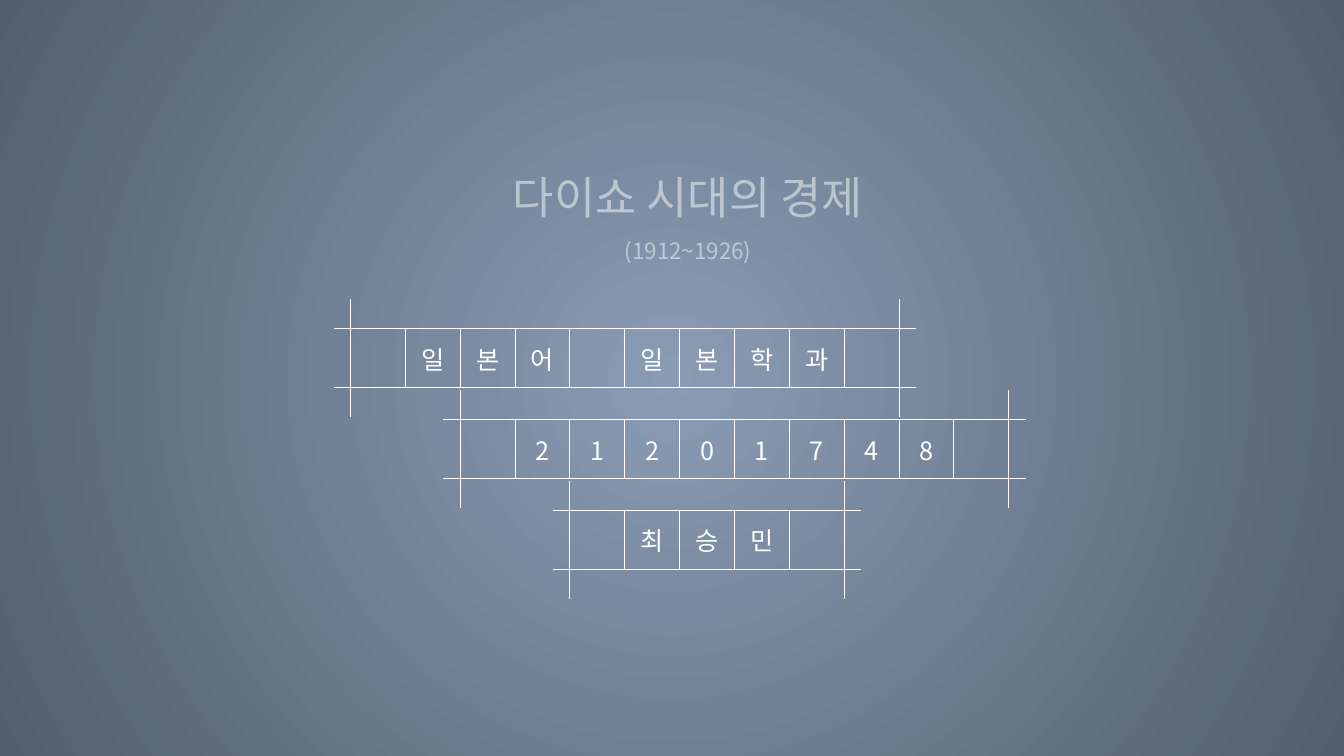
"""Build the title slide: a heading above three staggered manuscript-grid tables."""
from dataclasses import dataclass

from lxml.etree import SubElement
from pptx import Presentation
from pptx.dml.color import RGBColor
from pptx.enum.text import MSO_ANCHOR as Anchor, MSO_AUTO_SIZE as AutoSize, PP_ALIGN as Align
from pptx.oxml.ns import qn
from pptx.util import Inches, Pt

FONT = "Noto Sans CJK KR"
COLOURS = {"centre": "8A9CB4", "edge": "535E6D", "ink": "FFFFFF"}
WIDTH, HEIGHT = Inches(13.333), Inches(7.5)
COLUMN = WIDTH / 24.5
OVERHANG = 0.31
FIRST_LEFT, LEFT_STEP = 6.08, 2
FIRST_TOP, TOP_STEP = 0.396, 0.12
ROW_HEIGHTS = (0.039, 0.078, 0.039)
PLAIN_STYLE = "{2D5ABB26-0587-4C30-8999-92F81FD0307C}"


@dataclass(frozen=True)
class Strip:
    """One row of lettered squares; a space stands for an empty square."""
    letters: str
    order: int


@dataclass(frozen=True)
class Heading:
    """One line of the title block."""
    text: str
    size: int


STRIPS = [Strip(" 일본어 일본학과 ", 0), Strip(" 21201748 ", 1), Strip(" 최승민 ", 2)]
HEADINGS = [Heading("다이쇼 시대의 경제", 32), Heading("(1912~1926)", 16)]


def paint_background(page) -> None:
    """Fill the page with a circular gradient from its centre."""
    fill = page.background.fill
    fill.gradient()
    for stop, name, position in zip(fill.gradient_stops, ("centre", "edge"), (0, 1)):
        stop.color.rgb = RGBColor.from_string(COLOURS[name])
        stop.position = position
    gradient = next(page.element.iter(qn("a:gradFill")))
    gradient.remove(gradient.find(qn("a:lin")))
    path = SubElement(gradient, qn("a:path"), path="circle")
    SubElement(path, qn("a:fillToRect"), {side: "50000" for side in "ltrb"})


def format_span(span, size: int) -> None:
    """Give a run its size, colour and typefaces."""
    span.font.size = Pt(size)
    span.font.color.rgb = RGBColor.from_string(COLOURS["ink"])
    span.font.name = FONT
    SubElement(span.font._element, qn("a:ea"), typeface=FONT)


def draw_headings(page) -> None:
    """Write the half-transparent title block."""
    box = page.shapes.add_textbox(
        round(WIDTH * 0.287), round(HEIGHT * 0.183), round(WIDTH * 0.45), round(HEIGHT * 0.283))
    frame = box.text_frame
    frame.word_wrap = True
    frame.auto_size = AutoSize.SHAPE_TO_FIT_TEXT
    frame.text = "\n".join(heading.text for heading in HEADINGS)
    for para, heading in zip(frame.paragraphs, HEADINGS):
        para.alignment = Align.CENTER
        para.line_spacing = 1.5
        span = para.runs[0]
        format_span(span, heading.size)
        colour = next(span.font._element.iter(qn("a:srgbClr")))
        SubElement(colour, qn("a:alpha"), val="50000")


def draw_borders(cell, sides: dict[str, bool]) -> None:
    """Rule the chosen sides of a cell and clear the others."""
    properties = cell._tc.get_or_add_tcPr()
    for side, ruled in sides.items():
        line = SubElement(properties, qn(f"a:ln{side}"), w=str(Pt(0.75)))
        if ruled:
            fill = SubElement(line, qn("a:solidFill"))
            SubElement(fill, qn("a:srgbClr"), val=COLOURS["ink"])
        else:
            SubElement(line, qn("a:noFill"))


def write_letter(cell, letter: str) -> None:
    """Centre a letter in a cell, keeping an empty cell small."""
    cell.margin_left = cell.margin_right = cell.margin_top = cell.margin_bottom = 0
    cell.vertical_anchor = Anchor.MIDDLE
    para = cell.text_frame.paragraphs[0]
    para.alignment = Align.CENTER
    if letter:
        para.text = letter
        format_span(para.runs[0], 18)
    else:
        para.font.size = Pt(8)


def draw_strip(page, strip: Strip) -> None:
    """Draw one table whose rules run past its squares on every side."""
    widths = [OVERHANG, *[1] * len(strip.letters), OVERHANG]
    last_column, last_row = len(widths) - 1, len(ROW_HEIGHTS) - 1
    table = page.shapes.add_table(
        len(ROW_HEIGHTS), len(widths),
        round(COLUMN * (FIRST_LEFT + LEFT_STEP * strip.order)),
        round(HEIGHT * (FIRST_TOP + TOP_STEP * strip.order)),
        round(COLUMN * sum(widths)), round(HEIGHT * sum(ROW_HEIGHTS))).table
    table.first_row = table.horz_banding = False
    table._tbl.tblPr.find(qn("a:tableStyleId")).text = PLAIN_STYLE
    for column, width in zip(table.columns, widths):
        column.width = round(COLUMN * width)
    for row, height in zip(table.rows, ROW_HEIGHTS):
        row.height = round(HEIGHT * height)
    for row in (0, last_row):
        table.cell(row, 1).merge(table.cell(row, last_column - 1))
    for row in range(last_row + 1):
        for column in range(last_column + 1):
            cell = table.cell(row, column)
            inside = row == 1 and 0 < column < last_column
            write_letter(cell, strip.letters[column - 1].strip() if inside else "")
            if not cell.is_spanned:
                draw_borders(cell, {"L": column > 0, "R": column < last_column,
                                    "T": row > 0, "B": row < last_row})
            cell.fill.background()


def main() -> None:
    """Build and save the deck."""
    deck = Presentation()
    deck.slide_width, deck.slide_height = WIDTH, HEIGHT
    page = deck.slides.add_slide(deck.slide_layouts[6])
    paint_background(page)
    draw_headings(page)
    for strip in STRIPS:
        draw_strip(page, strip)
    deck.save("out.pptx")


if __name__ == "__main__":
    main()
